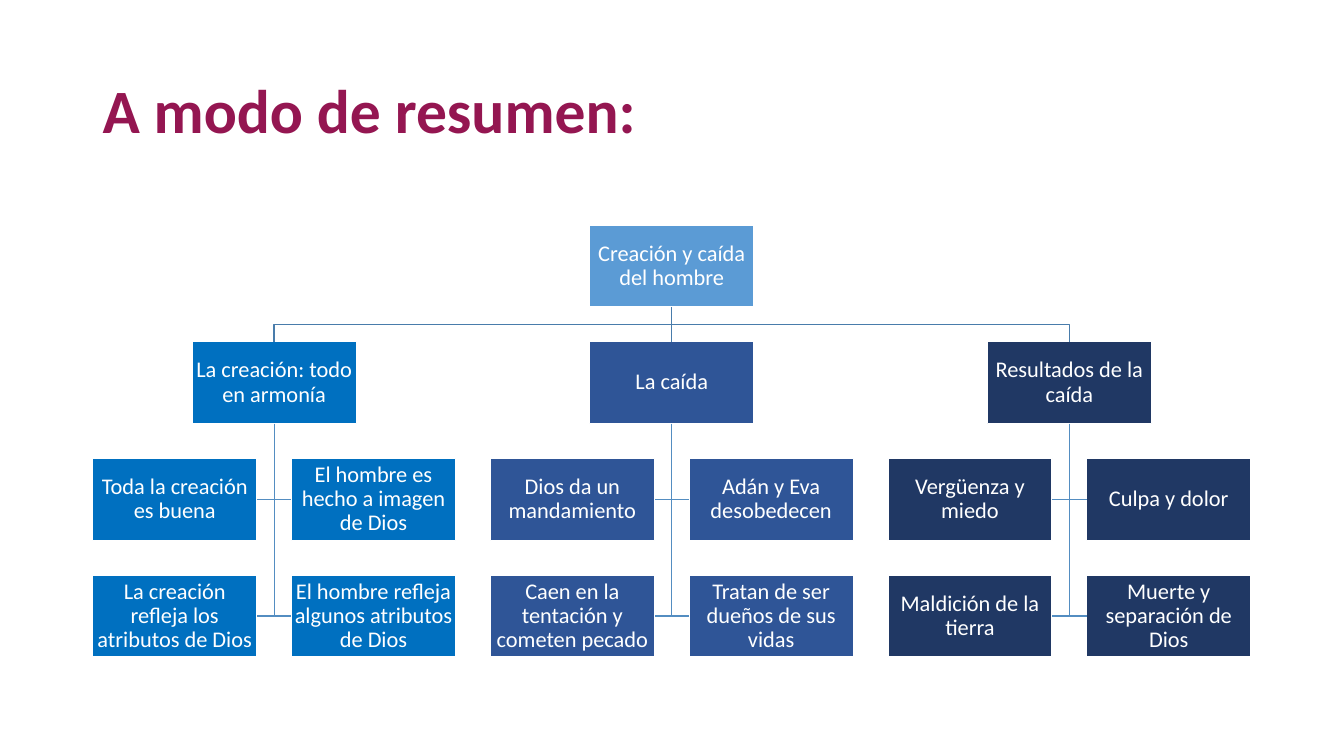
"""Build a summary slide with an organisation chart of the creation and the fall."""
from pptx import Presentation
from pptx.dml.color import RGBColor
from pptx.enum.shapes import MSO_CONNECTOR as Connector, MSO_SHAPE as Shape
from pptx.enum.text import MSO_ANCHOR as Anchor, PP_ALIGN as Align
from pptx.oxml.ns import qn
from pptx.util import Cm, Pt
from lxml import etree

WHITE = RGBColor(0xFF, 0xFF, 0xFF)
PLUM = RGBColor(0x94, 0x16, 0x51)
SKY = RGBColor(0x5B, 0x9B, 0xD5)
BLUE = RGBColor(0x00, 0x70, 0xC0)
INDIGO = RGBColor(0x2F, 0x55, 0x97)
NAVY = RGBColor(0x20, 0x38, 0x64)
BRANCH_LINE = RGBColor(0x49, 0x7C, 0xAB)
LEAF_LINE = RGBColor(0x53, 0x8D, 0xC1)

BOX_W, BOX_H = 4.14, 2.07
COLUMN_STEP, ROW_STEP = 5.01, 2.94
CENTER, TOP = 16.93, 5.67

BRANCHES = [
    ("La creación: todo en armonía", BLUE,
     ["Toda la creación es buena", "El hombre es hecho a imagen de Dios",
      "La creación refleja los atributos de Dios",
      "El hombre refleja algunos atributos de Dios"]),
    ("La caída", INDIGO,
     ["Dios da un mandamiento", "Adán y Eva desobedecen",
      "Caen en la tentación y cometen pecado",
      "Tratan de ser dueños de sus vidas"]),
    ("Resultados de la caída", NAVY,
     ["Vergüenza y miedo", "Culpa y dolor", "Maldición de la tierra",
      "Muerte y separación de Dios"]),
]


def write(frame, text, size=16, color=WHITE, bold=False, align=Align.CENTER):
    frame.word_wrap = True
    frame.vertical_anchor = Anchor.MIDDLE
    paragraph = frame.paragraphs[0]
    paragraph.alignment = align
    paragraph.line_spacing = 0.9
    run = paragraph.add_run()
    run.text = text
    run.font.name = "Calibri"
    run.font.size = Pt(size)
    run.font.bold = bold
    run.font.color.rgb = color


def add_box(text, center, row, fill):
    box = slide.shapes.add_shape(
        Shape.RECTANGLE, Cm(center - BOX_W / 2), Cm(TOP + row * ROW_STEP),
        Cm(BOX_W), Cm(BOX_H))
    box.shadow.inherit = False
    box.fill.solid()
    box.fill.fore_color.rgb = fill
    box.line.color.rgb = WHITE
    box.line.width = Pt(1)
    frame = box.text_frame
    frame.margin_left = frame.margin_right = Cm(0.03)
    frame.margin_top = frame.margin_bottom = Cm(0.03)
    write(frame, text)
    return box


presentation = Presentation()
presentation.slide_width = Cm(33.87)
presentation.slide_height = Cm(19.05)
slide = presentation.slides.add_slide(presentation.slide_layouts[5])

title = slide.shapes.title
title.left, title.top, title.width, title.height = Cm(2.33), Cm(1.01), Cm(29.21), Cm(3.68)
write(title.text_frame, "A modo de resumen:", size=44, color=PLUM, bold=True, align=Align.LEFT)

root = add_box("Creación y caída del hombre", CENTER, 0, SKY)
root_bottom = TOP + BOX_H
branch_top = TOP + ROW_STEP
branch_bottom = branch_top + BOX_H
routes = []

for index, (heading, fill, leaves) in enumerate(BRANCHES):
    branch_x = CENTER + (index - 1) * 2 * COLUMN_STEP
    branch = add_box(heading, branch_x, 1, fill)
    if branch_x == CENTER:
        trunk = slide.shapes.add_connector(Connector.STRAIGHT, 0, 0, 0, 0)
        trunk.begin_connect(root, 2)
        trunk.end_connect(branch, 0)
        trunk.line.color.rgb = BRANCH_LINE
        trunk.line.width = Pt(1)
        etree.SubElement(trunk._element.spPr, qn("a:effectLst"))
    else:
        middle = (root_bottom + branch_top) / 2
        routes.append((BRANCH_LINE, [(CENTER, root_bottom), (CENTER, middle),
                                     (branch_x, middle), (branch_x, branch_top)]))
    for position, leaf in enumerate(leaves):
        row, side = 2 + position // 2, position % 2 * 2 - 1
        add_box(leaf, branch_x + side * COLUMN_STEP / 2, row, fill)
        leaf_middle = TOP + row * ROW_STEP + BOX_H / 2
        leaf_edge = branch_x + side * (COLUMN_STEP - BOX_W) / 2
        routes.append((LEAF_LINE, [(branch_x, branch_bottom), (branch_x, leaf_middle),
                                   (leaf_edge, leaf_middle)]))

for color, route in routes:
    start, *corners = [(Cm(x), Cm(y)) for x, y in route]
    builder = slide.shapes.build_freeform(*start)
    builder.add_line_segments(corners, close=False)
    elbow = builder.convert_to_shape()
    elbow.shadow.inherit = False
    elbow.fill.background()
    elbow.line.color.rgb = color
    elbow.line.width = Pt(1)

presentation.save("out.pptx")
